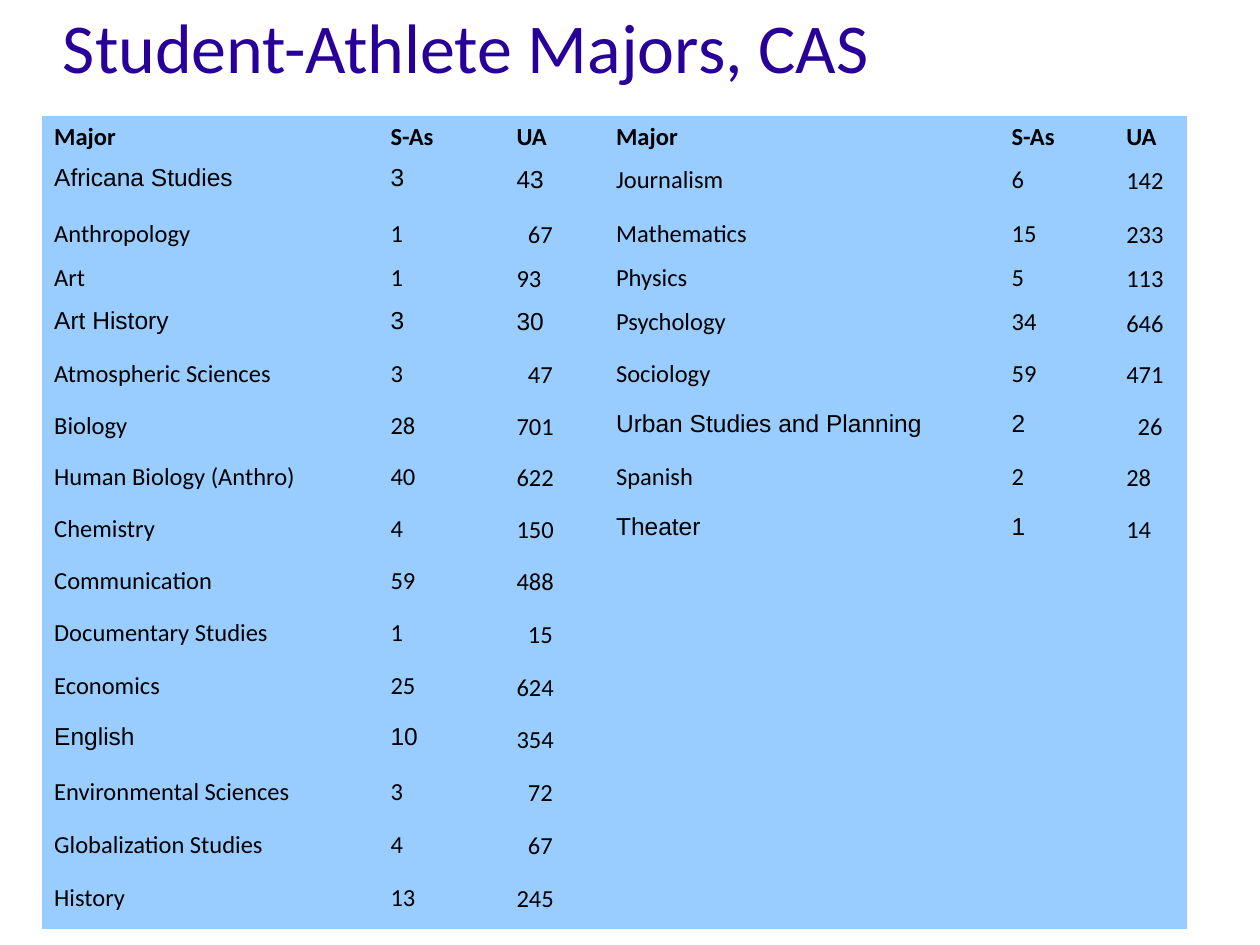
from dataclasses import dataclass

from pptx import Presentation
from pptx.dml.color import RGBColor
from pptx.enum import text
from pptx.util import Inches, Pt


@dataclass(frozen=True)
class Theme:
    title_color: RGBColor = RGBColor(0x28, 0x00, 0x99)
    text_color: RGBColor = RGBColor(0x00, 0x00, 0x00)
    cell_fill: RGBColor = RGBColor(0x99, 0xCC, 0xFF)
    title_size: Pt = Pt(40)
    table_size: Pt = Pt(14)
    main_font: str = "Calibri"
    alternate_font: str = "Arial"


THEME = Theme()
PLAIN_STYLE = "{2D5ABB26-0587-4C30-8999-92F81FD0307C}"  # no fill, no grid

HEADER = ("Major", "S-As", "UA")
LEFT_MAJORS = [
    ("Africana Studies", "3", "43"),
    ("Anthropology", "1", "67"),
    ("Art", "1", "93"),
    ("Art History", "3", "30"),
    ("Atmospheric Sciences", "3", "47"),
    ("Biology", "28", "701"),
    ("Human Biology (Anthro)", "40", "622"),
    ("Chemistry", "4", "150"),
    ("Communication", "59", "488"),
    ("Documentary Studies", "1", "15"),
    ("Economics", "25", "624"),
    ("English", "10", "354"),
    ("Environmental Sciences", "3", "72"),
    ("Globalization Studies", "4", "67"),
    ("History", "13", "245"),
]
RIGHT_MAJORS = [
    ("Journalism", "6", "142"),
    ("Mathematics", "15", "233"),
    ("Physics", "5", "113"),
    ("Psychology", "34", "646"),
    ("Sociology", "59", "471"),
    ("Urban Studies and Planning", "2", "26"),
    ("Spanish", "2", "28"),
    ("Theater", "1", "14"),
]
# How many leading cells of a major's entry use the alternate font
ALTERNATE_CELLS = {"Africana Studies": 3, "Art History": 3, "English": 2,
                   "Urban Studies and Planning": 2, "Theater": 2}
INDENTED_TOTALS = {"Anthropology", "Atmospheric Sciences", "Documentary Studies",
                   "Environmental Sciences", "Globalization Studies",
                   "Urban Studies and Planning"}

COLUMN_WIDTHS = [2.67, 1, 0.79, 3.14, 0.91, 0.58]
ROW_HEIGHTS = [0.34, 0.43, 0.35, 0.35] + [0.41] * 5 + [0.42] * 7


def apply_format(target, values):
    for name, value in values.items():
        setattr(target, name, value)


def write_text(paragraph, content, color, **font_values):
    run = paragraph.add_run()
    run.text = content
    apply_format(run.font, font_values)
    run.font.color.rgb = color


def add_title(slide, box, content):
    frame = slide.shapes.add_textbox(*map(Inches, box)).text_frame
    apply_format(frame, {
        "word_wrap": True, "vertical_anchor": text.MSO_ANCHOR.MIDDLE,
        "margin_left": 0, "margin_right": 0, "margin_top": 0, "margin_bottom": 0,
    })
    write_text(frame.paragraphs[0], content, THEME.title_color,
               name=THEME.main_font, size=THEME.title_size)


def fill_entry(table, row, first_column, entry):
    """Write one major with its two counts."""
    major = entry[0]
    for offset, content in enumerate(entry):
        cell = table.cell(row, first_column + offset)
        is_total = offset == 2 and row > 0
        if is_total:
            cell.margin_top = Inches(0.07)
            if major in INDENTED_TOTALS:
                cell.margin_left = Inches(0.19)
        paragraph = cell.text_frame.paragraphs[0]
        paragraph.line_spacing = 0.93
        alternate = offset < ALTERNATE_CELLS.get(major, 0)
        write_text(paragraph, content, THEME.text_color,
                   name=THEME.alternate_font if alternate else THEME.main_font,
                   size=THEME.table_size, bold=row == 0)


def add_majors_table(slide, left, top):
    frame = slide.shapes.add_table(
        len(ROW_HEIGHTS), len(COLUMN_WIDTHS), Inches(left), Inches(top),
        Inches(sum(COLUMN_WIDTHS)), Inches(sum(ROW_HEIGHTS)))
    table = frame.table
    apply_format(table, {"first_row": False, "horz_banding": False})
    table._tbl.tblPr.find("{*}tableStyleId").text = PLAIN_STYLE

    # Grid
    for column, width in zip(table.columns, COLUMN_WIDTHS):
        column.width = Inches(width)
    for row, height in zip(table.rows, ROW_HEIGHTS):
        row.height = Inches(height)
    for cell in table.iter_cells():
        apply_format(cell, {"margin_left": Inches(0.1), "margin_right": Inches(0.1),
                            "margin_top": Inches(0.06), "margin_bottom": Inches(0.05)})
        cell.fill.solid()
        cell.fill.fore_color.rgb = THEME.cell_fill

    # Two lists of majors side by side
    for first_column, majors in ((0, LEFT_MAJORS), (3, RIGHT_MAJORS)):
        for row, entry in enumerate([HEADER] + majors):
            fill_entry(table, row, first_column, entry)


def main():
    presentation = Presentation()
    apply_format(presentation, {"slide_width": Inches(10), "slide_height": Inches(7.5)})
    slide = presentation.slides.add_slide(presentation.slide_layouts[6])
    add_title(slide, (0.5, 0.02, 9, 0.68), "Student-Athlete Majors, CAS")
    add_majors_table(slide, 0.33, 0.92)
    presentation.save("out.pptx")


if __name__ == "__main__":
    main()
